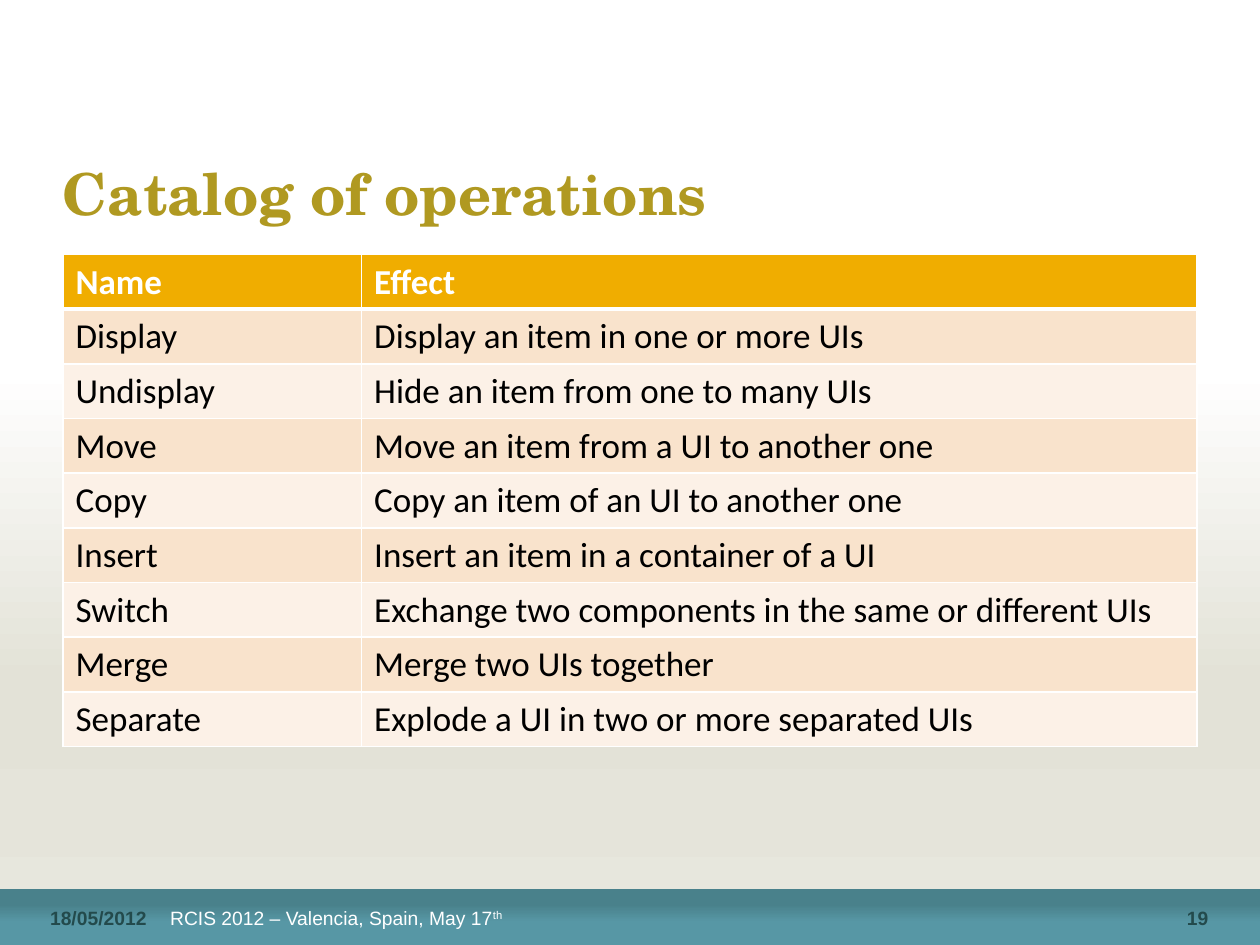
from typing import NamedTuple

from lxml import etree
from pptx import Presentation
from pptx import util as u
from pptx.dml.color import RGBColor
from pptx.enum import shapes, text
from pptx.oxml.ns import qn

Cm = u.Cm
WHITE, DARK = "FFFFFF", "234A4C"
BANDS = "F9E3CC", "FCF1E7"
ROWS = [
    ("Name", "Effect"),
    ("Display", "Display an item in one or more UIs"),
    ("Undisplay", "Hide an item from one to many UIs"),
    ("Move", "Move an item from a UI to another one"),
    ("Copy", "Copy an item of an UI to another one"),
    ("Insert", "Insert an item in a container of a UI"),
    ("Switch", "Exchange two components in the same or different UIs"),
    ("Merge", "Merge two UIs together"),
    ("Separate", "Explode a UI in two or more separated UIs"),
]


class Box(NamedTuple):
    """Place and insets (left, top, right, bottom) in centimetres."""
    left: float
    top: float
    width: float
    height: float
    inset: tuple[float, float, float, float]


def rgb(code: str) -> RGBColor:
    return RGBColor.from_string(code)


def write(frame, words: str, *, size: float, font: str, color: str,
          bold: bool = False, align=text.PP_ALIGN.LEFT, sup: str = "") -> None:
    """Fill the first paragraph; sup is a superscript ending."""
    para = frame.paragraphs[0]
    para.alignment = align
    for part in filter(None, (words, sup)):
        run = para.add_run()
        run.text = part
        run.font.size, run.font.name, run.font.bold = u.Pt(size), font, bold
        run.font.color.rgb = rgb(color)
    if sup:
        run.font._element.set("baseline", "30000")


def add_text(slide, box: Box, words: str, *, anchor=text.MSO_ANCHOR.BOTTOM,
             **style) -> None:
    frame = slide.shapes.add_textbox(*map(Cm, box[:4])).text_frame
    frame.word_wrap = True
    frame.vertical_anchor = anchor
    (frame.margin_left, frame.margin_top,
     frame.margin_right, frame.margin_bottom) = map(Cm, box.inset)
    write(frame, words, **style)


def shade(fill, root, stops: list[tuple[int, str]]) -> None:
    """Give a downward gradient with stops as (percent, colour)."""
    fill.gradient()
    fill.gradient_angle = 270
    group = root.find(".//" + qn("a:gsLst"))
    for old in list(group):
        group.remove(old)
    for spot, color in stops:
        stop = etree.SubElement(group, qn("a:gs"), pos=str(spot * 1000))
        etree.SubElement(stop, qn("a:srgbClr"), val=color)


def edge(cell, side: str, width: float) -> None:
    line = etree.SubElement(cell._tc.get_or_add_tcPr(), qn("a:ln" + side),
                            w=str(u.Pt(width)))
    paint = etree.SubElement(line, qn("a:solidFill"))
    etree.SubElement(paint, qn("a:srgbClr"), val=WHITE)


def add_grid(slide) -> None:
    grid = slide.shapes.add_table(len(ROWS), 2, Cm(1.27), Cm(5.13),
                                  Cm(22.86), Cm(9.9)).table
    grid.horz_banding = False
    for col, width in zip(grid.columns, (6.02, 16.84)):
        col.width = Cm(width)
    for i, row in enumerate(ROWS):
        head = i == 0
        grid.rows[i].height = Cm(1.04)
        for j, words in enumerate(row):
            cell = grid.cell(i, j)
            for side in "LRTB":
                thick = (head and side == "B") or (i == 1 and side == "T")
                edge(cell, side, 3 if thick else 1)
            cell.fill.solid()
            cell.fill.fore_color.rgb = rgb("F0AD00" if head else BANDS[(i - 1) % 2])
            write(cell.text_frame, words, size=20, font="Calibri",
                  color=WHITE if head else "000000", bold=head)


def main() -> None:
    deck = Presentation()
    deck.slide_width, deck.slide_height = Cm(25.4), Cm(19.05)
    slide = deck.slides.add_slide(deck.slide_layouts[6])
    shade(slide.background.fill, slide.element,
          [(39, WHITE), (72, "E3E2D7"), (100, "E7E7DD")])

    bar = slide.shapes.add_shape(shapes.MSO_SHAPE.RECTANGLE, Cm(0), Cm(17.93),
                                 Cm(25.4), Cm(1.12))
    bar.shadow.inherit = False
    bar.line.fill.background()
    shade(bar.fill, bar.element,
          [(27, "49818B"), (59, "5797A5"), (100, "5797A5")])

    add_text(slide, Box(1.27, 2.72, 22.86, 2.31, (0, 0.13, 0.13, 0.13)),
             "Catalog of operations", anchor=text.MSO_ANCHOR.MIDDLE,
             size=33, font="TeX Gyre Schola", color="B09921", bold=True)
    add_grid(slide)

    foot = {"size": 11, "font": "Arial"}
    add_text(slide, Box(0.71, 17.98, 2.59, 0.76, (0.3, 0.13, 0.13, 0)),
             "18/05/2012", color=DARK, bold=True, **foot)
    add_text(slide, Box(3.3, 17.98, 19.99, 0.76, (0.13, 0.13, 0.13, 0)),
             "RCIS 2012 – Valencia, Spain, May 17", sup="th", color=WHITE, **foot)
    add_text(slide, Box(23.09, 17.98, 1.52, 0.76, (0.25, 0.13, 0.25, 0)),
             "19", color=DARK, bold=True, align=text.PP_ALIGN.RIGHT, **foot)
    deck.save("out.pptx")


if __name__ == "__main__":
    main()
